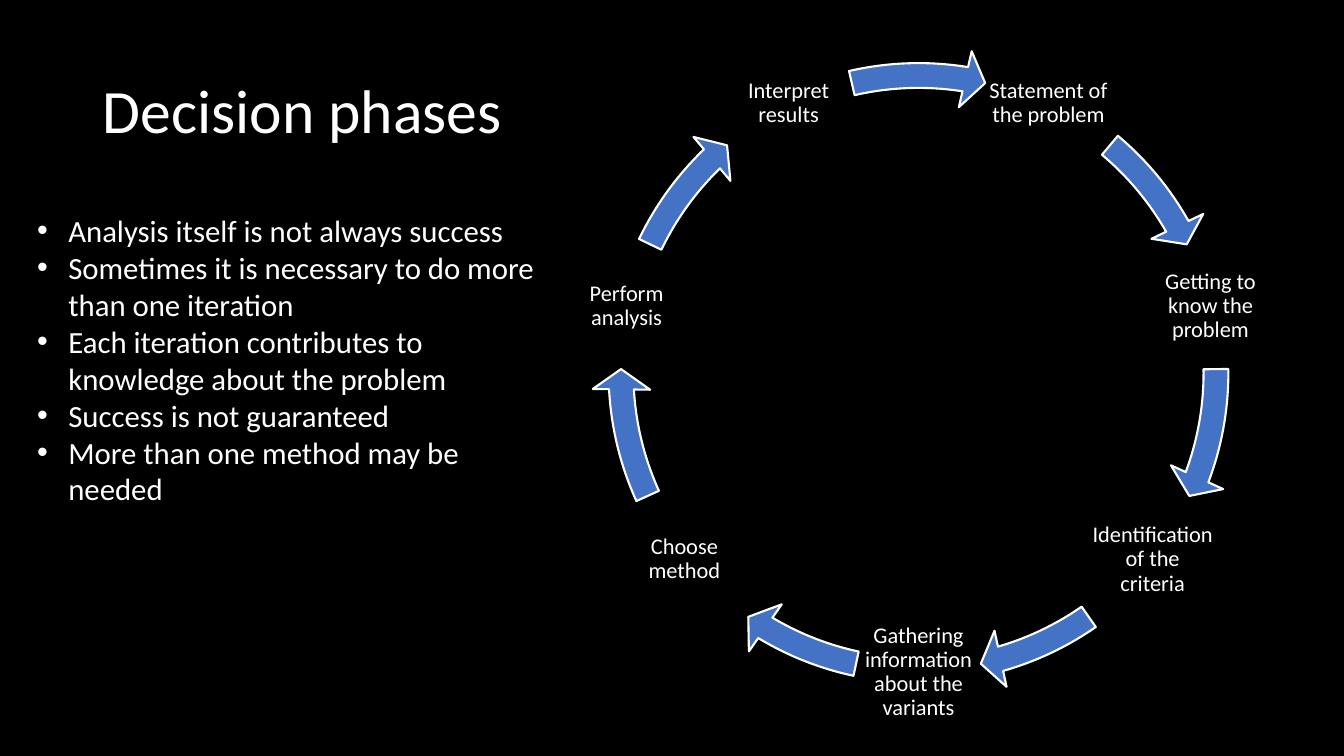
"""Build the decision phases slide with its cycle of seven steps."""
import math
from dataclasses import dataclass

from lxml import etree
from pptx import Presentation
from pptx.dml.color import RGBColor
from pptx.enum.shapes import MSO_SHAPE
from pptx.enum.text import MSO_ANCHOR, MSO_AUTO_SIZE, PP_ALIGN
from pptx.oxml.ns import qn
from pptx.util import Inches, Pt

CIRCULAR_ARROW = MSO_SHAPE.CIRCULAR_ARROW
MIDDLE = MSO_ANCHOR.MIDDLE
LEFT, CENTER = PP_ALIGN.LEFT, PP_ALIGN.CENTER
NO_FIT, GROW = MSO_AUTO_SIZE.NONE, MSO_AUTO_SIZE.SHAPE_TO_FIT_TEXT

TITLE = "Decision phases"
POINTS = [
    "Analysis itself is not always success",
    "Sometimes it is necessary to do more than one iteration",
    "Each iteration contributes to knowledge about the problem",
    "Success is not guaranteed",
    "More than one method may be needed",
]
# Each phase: label, then start and end angle in degrees of the arrow leaving it
PHASES = [
    ("Statement of the problem", 310.06, 330.48),
    ("Getting to know the problem", 359.27, 20.53),
    ("Identification of the criteria", 55.1, 73.99),
    ("Gathering information about the variants", 102.11, 120.99),
    ("Choose method", 155.56, 176.83),
    ("Perform analysis", 205.61, 226.03),
    ("Interpret results", 257.05, 279.05),
]
CENTER_X, CENTER_Y, RADIUS = 9.11, 3.7, 2.97
LABEL_SIZE, ARROW_SIZE = 1.25, 6.47
LABEL_INSET = 0.02
ARROW_WIDTH, HEAD_ANGLE, HEAD_WIDTH = 0.038, 3.91, 0.044
DEGREE = 0.6
INDENT = Inches(0.31)


@dataclass(frozen=True)
class Theme:
    font: str = "Calibri"
    background: RGBColor = RGBColor(0x00, 0x00, 0x00)
    text: RGBColor = RGBColor(0xFF, 0xFF, 0xFF)
    arrow: RGBColor = RGBColor(0x44, 0x72, 0xC4)
    title_size: int = 44
    point_size: int = 22
    label_size: int = 16
    outline: float = 1.5


THEME = Theme()


def add_run(p, text, size):
    r = p.add_run()
    r.text = text
    r.font.name = THEME.font
    r.font.size = Pt(size)
    r.font.color.rgb = THEME.text


def square(x, y, size):
    return [Inches(v) for v in (x - size / 2, y - size / 2, size, size)]


def add_title(s):
    sp = s.shapes.title
    sp.left, sp.top = Inches(0.92), Inches(0.4)
    sp.width, sp.height = Inches(11.5), Inches(1.45)
    tf = sp.text_frame
    tf.auto_size = NO_FIT
    tf.vertical_anchor = MIDDLE
    p = tf.paragraphs[0]
    p.alignment = LEFT
    p.line_spacing = 0.9
    add_run(p, TITLE, THEME.title_size)


def add_label(group, text, x, y):
    tf = group.shapes.add_textbox(*square(x, y, LABEL_SIZE)).text_frame
    tf.word_wrap = True
    tf.vertical_anchor = MIDDLE
    tf.margin_left = tf.margin_right = Inches(LABEL_INSET)
    tf.margin_top = tf.margin_bottom = Inches(LABEL_INSET)
    p = tf.paragraphs[0]
    p.alignment = CENTER
    p.line_spacing = 0.9
    add_run(p, text, THEME.label_size)


def add_arrow(group, start, end):
    sp = group.shapes.add_shape(CIRCULAR_ARROW, *square(CENTER_X, CENTER_Y, ARROW_SIZE))
    sp.shadow.inherit = False
    sp.fill.solid()
    sp.fill.fore_color.rgb = THEME.arrow
    sp.line.color.rgb = THEME.text
    sp.line.width = Pt(THEME.outline)
    values = (ARROW_WIDTH, HEAD_ANGLE * DEGREE, end * DEGREE, start * DEGREE, HEAD_WIDTH)
    for i, value in enumerate(values):
        sp.adjustments[i] = value


def add_cycle(s):
    group = s.shapes.add_group_shape()
    step = 2 * math.pi / len(PHASES)
    for i, (text, start, end) in enumerate(PHASES):
        angle = (i + 0.5) * step
        x = CENTER_X + RADIUS * math.sin(angle)
        y = CENTER_Y - RADIUS * math.cos(angle)
        add_label(group, text, x, y)
        add_arrow(group, start, end)


def add_bullet(p):
    pPr = p._p.get_or_add_pPr()
    pPr.set("marL", str(INDENT))
    pPr.set("indent", str(-INDENT))
    etree.SubElement(pPr, qn("a:buFont")).set("typeface", "Arial")
    etree.SubElement(pPr, qn("a:buChar")).set("char", "•")


def add_points(s):
    box = s.shapes.add_textbox(Inches(0.27), Inches(2.05), Inches(5.33), Inches(3.06))
    tf = box.text_frame
    tf.word_wrap = True
    tf.auto_size = GROW
    for i, text in enumerate(POINTS):
        p = tf.add_paragraph() if i else tf.paragraphs[0]
        add_bullet(p)
        add_run(p, text, THEME.point_size)


def main():
    prs = Presentation()
    prs.slide_width, prs.slide_height = Inches(13.33), Inches(7.5)
    s = prs.slides.add_slide(prs.slide_layouts.get_by_name("Title Only"))
    s.background.fill.solid()
    s.background.fill.fore_color.rgb = THEME.background
    add_title(s)
    add_cycle(s)
    add_points(s)
    prs.save("out.pptx")


if __name__ == "__main__":
    main()
